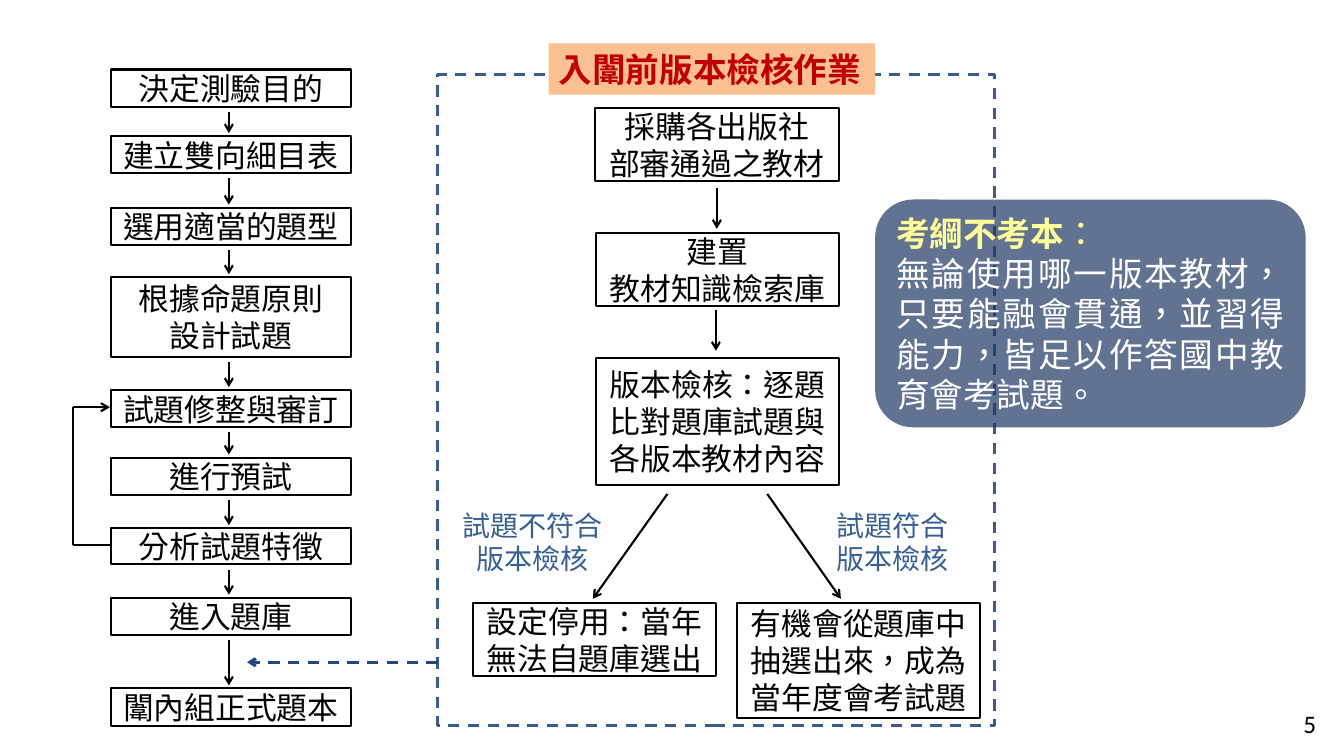
from itertools import pairwise

from lxml import etree
from pptx import Presentation
from pptx.dml.color import RGBColor
from pptx.enum import dml, shapes, text
from pptx.oxml import ns
from pptx.util import Inches, Pt

HUES = {"ink": "000000", "note": "376092", "frame": "385D8A", "link": "1F497D",
        "peach": "FAC090", "red": "C00000", "navy": "203864",
        "lemon": "FFFF99", "white": "FFFFFF"}
FONT = "Noto Sans CJK SC"
KIND = shapes.MSO_SHAPE
ALIGN = text.PP_ALIGN


def hue(name):
    return RGBColor.from_string(HUES[name])


def sub(node, tag, **attrs):
    return etree.SubElement(node, ns.qn(tag), attrs)


class Chart:
    """Holds the slide and the look of its boxes, arrows and labels."""

    def __init__(self, slide):
        self.slide = slide
        self.items = slide.shapes

    def style(self, run, size, color, bold=False, face=FONT):
        font = run.font
        font.size, font.bold, font.name = Pt(size), bold, face
        font.color.rgb = hue(color)
        props = run._r.get_or_add_rPr()
        props.set("lang", "zh-TW")
        sub(props, "a:ea", typeface=face)

    def fill_text(self, shape, words, size, color, align=ALIGN.CENTER, bold=False, face=FONT):
        frame = shape.text_frame
        frame.text = words
        frame.word_wrap = True
        frame.auto_size = text.MSO_AUTO_SIZE.NONE
        frame.vertical_anchor = text.MSO_ANCHOR.MIDDLE
        for para in frame.paragraphs:
            para.alignment = align
            para.line_spacing = Pt(round(size * 1.2, 1))
            for run in para.runs:
                self.style(run, size, color, bold, face)

    def shape(self, kind, area):
        item = self.items.add_shape(kind, *map(Inches, area))
        item.shadow.inherit = False
        item.fill.background()
        item.line.fill.background()
        return item

    def box(self, area, words):
        item = self.shape(KIND.RECTANGLE, area)
        item.line.color.rgb = hue("ink")
        item.line.width = Pt(1.5)
        self.fill_text(item, words, 22, "ink")

    def label(self, area, words, size, color, **look):
        item = self.items.add_textbox(*map(Inches, area))
        self.fill_text(item, words, size, color, **look)

    def line(self, start, end, color="ink", width=1.5, head=True, dash=None):
        item = self.items.add_connector(shapes.MSO_CONNECTOR.STRAIGHT,
                                        *map(Inches, start + end))
        item.line.color.rgb = hue(color)
        item.line.width = Pt(width)
        item.line.dash_style = dash
        if head:
            sub(item.element.spPr.find(ns.qn("a:ln")), "a:tailEnd", type="arrow")
        sub(item.element.spPr, "a:effectLst")

    def frame(self, area):
        item = self.shape(KIND.RECTANGLE, area)
        item.line.color.rgb = hue("frame")
        item.line.width = Pt(2)
        item.line.dash_style = dml.MSO_LINE.DASH

    def title(self, area, words):
        item = self.items.title
        item.left, item.top, item.width, item.height = map(Inches, area)
        item.fill.solid()
        item.fill.fore_color.rgb = hue("peach")
        self.fill_text(item, words, 24, "red", ALIGN.LEFT, True)
        self.items.element.append(item.element)  # bring above the frame

    def callout(self, area, lead, body):
        item = self.shape(KIND.ROUNDED_RECTANGLE, area)
        item.fill.solid()
        item.fill.fore_color.rgb = hue("navy")
        tint = item.element.spPr.find(".//" + ns.qn("a:srgbClr"))
        sub(tint, "a:alpha", val="70000")
        self.fill_text(item, f"{lead}\n{body}", 24, "white", ALIGN.JUSTIFY)
        first = item.text_frame.paragraphs[0]
        first.runs[0].font.bold = True
        first.runs[0].font.color.rgb = hue("lemon")
        colon = first.add_run()
        colon.text = "："
        self.style(colon, 24, "lemon")


STEPS = [(0.69, 0.37, "決定測驗目的"), (1.35, 0.37, "建立雙向細目表"),
         (2.06, 0.37, "選用適當的題型"), (2.75, 0.79, "根據命題原則\n設計試題"),
         (3.87, 0.37, "試題修整與審訂"), (4.54, 0.37, "進行預試"),
         (5.24, 0.36, "分析試題特徵"), (5.93, 0.37, "進入題庫"),
         (6.83, 0.37, "闈內組正式題本")]
CHECKS = [((5.9, 1.07, 2.42, 0.73), "採購各出版社\n部審通過之教材"),
          ((5.91, 2.31, 2.41, 0.73), "建置\n教材知識檢索庫"),
          ((5.91, 3.55, 2.41, 1.26), "版本檢核：逐題比對題庫試題與各版本教材內容"),
          ((4.69, 5.98, 2.41, 0.73), "設定停用：當年無法自題庫選出"),
          ((7.31, 5.98, 2.41, 1.14), "有機會從題庫中抽選出來，成為當年度會考試題")]
ARROWS = [((7.11, 1.87), (7.11, 2.27)), ((7.1, 3.08), (7.1, 3.48)),
          ((6.62, 4.9), (5.88, 5.94)), ((7.61, 4.9), (8.34, 5.94))]
LOOP = [(1.09, 5.41), (0.72, 5.41), (0.72, 4.04), (1.09, 4.04)]


def main():
    deck = Presentation()
    deck.slide_width, deck.slide_height = Inches(13.33), Inches(7.5)
    chart = Chart(deck.slides.add_slide(deck.slide_layouts[5]))

    for top, high, words in STEPS:
        chart.box((1.1, top, 2.38, high), words)
    for (top, high, _), (below, _, _) in pairwise(STEPS):
        chart.line((2.27, top + high + 0.05), (2.27, below - 0.03))
    for start, end in pairwise(LOOP):
        chart.line(start, end, head=end == LOOP[-1])

    for area, words in CHECKS:
        chart.box(area, words)
    for start, end in ARROWS:
        chart.line(start, end)
    for left, words in [(4.34, "試題不符合\n版本檢核"), (7.91, "試題符合\n版本檢核")]:
        chart.label((left, 5.01, 1.88, 0.73), words, 20, "note")

    chart.frame((4.34, 0.74, 5.52, 6.46))
    chart.title((5.44, 0.43, 3.24, 0.51), "入闈前版本檢核作業")
    chart.line((4.34, 6.57), (2.45, 6.57), "link", 2, dash=dml.MSO_LINE.DASH)
    chart.callout((8.68, 1.98, 4.27, 2.26), "考綱不考本",
                  "無論使用哪一版本教材，只要能融會貫通，並習得能力，皆足以作答國中教育會考試題。")
    chart.label((12.83, 6.98, 0.57, 0.4), "5", 18, "ink", align=ALIGN.LEFT, face="Calibri")
    deck.save("out.pptx")


if __name__ == "__main__":
    main()
